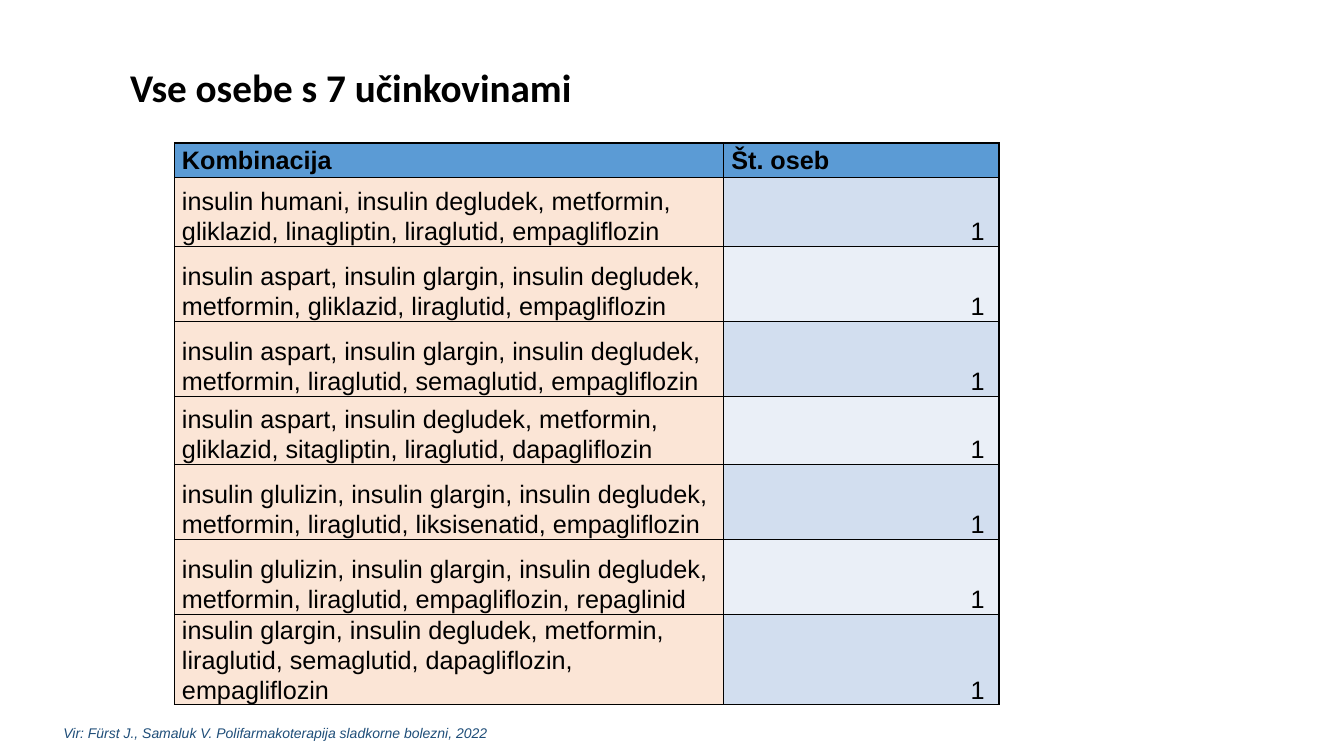
"""Build a slide with a table of seven-drug combinations."""
from dataclasses import dataclass

from lxml import etree
from pptx import Presentation
from pptx.dml.color import RGBColor
from pptx.enum.text import MSO_ANCHOR, MSO_AUTO_SIZE, PP_ALIGN
from pptx.oxml.ns import qn
from pptx.util import Pt

LEFT, RIGHT = PP_ALIGN.LEFT, PP_ALIGN.RIGHT
MIDDLE, BOTTOM = MSO_ANCHOR.MIDDLE, MSO_ANCHOR.BOTTOM
NONE = MSO_AUTO_SIZE.NONE
BLACK, BLUE, PEACH, NAVY = "000000", "5B9BD5", "FBE5D6", "1F4E79"
BANDS = ("D2DEEF", "EAEFF7")
WIDTHS = (392.4, 196.6)
HEAD = 24.4


@dataclass
class Combo:
    drugs: str
    height: float = 53.6
    count: int = 1


COMBOS = [
    Combo("insulin humani, insulin degludek, metformin, gliklazid, "
          "linagliptin, liraglutid, empagliflozin", 49.4),
    Combo("insulin aspart, insulin glargin, insulin degludek, metformin, "
          "gliklazid, liraglutid, empagliflozin"),
    Combo("insulin aspart, insulin glargin, insulin degludek, metformin, "
          "liraglutid, semaglutid, empagliflozin"),
    Combo("insulin aspart, insulin degludek, metformin, gliklazid, "
          "sitagliptin, liraglutid, dapagliflozin", 48.5),
    Combo("insulin glulizin, insulin glargin, insulin degludek, metformin, "
          "liraglutid, liksisenatid, empagliflozin"),
    Combo("insulin glulizin, insulin glargin, insulin degludek, metformin, "
          "liraglutid, empagliflozin, repaglinid"),
    Combo("insulin glargin, insulin degludek, metformin, liraglutid, "
          "semaglutid, dapagliflozin, empagliflozin"),
]


def rgb(code: str) -> RGBColor:
    return RGBColor.from_string(code)


def write(frame, text: str, *, size: float = 18, font: str = "Arial",
          color: str = BLACK, bold: bool = False, slant: bool = False,
          align=LEFT, line: float = 1.0, after: float = 0) -> None:
    para = frame.paragraphs[0]
    para.alignment = align
    para.line_spacing = line
    para.space_before, para.space_after = Pt(0), Pt(after)
    run = para.add_run()
    run.text = text
    face = run.font
    face.name, face.size = font, Pt(size)
    face.bold, face.italic = bold, slant
    face.color.rgb = rgb(color)


def border(cell) -> None:
    props = cell._tc.get_or_add_tcPr()
    for side in ("a:lnL", "a:lnR", "a:lnT", "a:lnB"):
        edge = etree.SubElement(props, qn(side), w=str(Pt(1)))
        solid = etree.SubElement(edge, qn("a:solidFill"))
        etree.SubElement(solid, qn("a:srgbClr"), val=BLACK)


def paint(cell, text: str, fill: str, *, anchor=BOTTOM, inset: float = 5.4,
          bold: bool = False, align=LEFT) -> None:
    border(cell)
    cell.fill.solid()
    cell.fill.fore_color.rgb = rgb(fill)
    cell.vertical_anchor = anchor
    cell.margin_left, cell.margin_right = Pt(5.4), Pt(inset)
    cell.margin_top = cell.margin_bottom = Pt(0)
    write(cell.text_frame, text, bold=bold, align=align, line=1.07, after=8)


def add_grid(slide) -> None:
    total = HEAD + sum(combo.height for combo in COMBOS)
    table = slide.shapes.add_table(
        len(COMBOS) + 1, len(WIDTHS), Pt(124.6), Pt(102.2),
        Pt(sum(WIDTHS)), Pt(total)).table
    for col, width in zip(table.columns, WIDTHS):
        col.width = Pt(width)
    table.rows[0].height = Pt(HEAD)
    for col, label in enumerate(("Kombinacija", "Št. oseb")):
        paint(table.cell(0, col), label, BLUE, anchor=MIDDLE, bold=True)
    for row, combo in enumerate(COMBOS, 1):
        table.rows[row].height = Pt(combo.height)
        paint(table.cell(row, 0), combo.drugs, PEACH)
        paint(table.cell(row, 1), str(combo.count), BANDS[(row - 1) % 2],
              inset=10.4, align=RIGHT)


def add_title(slide) -> None:
    title = slide.shapes.title
    title.left, title.top = Pt(85.7), Pt(30.2)
    title.width, title.height = Pt(791.3), Pt(67.7)
    frame = title.text_frame
    frame.auto_size, frame.vertical_anchor = NONE, MIDDLE
    write(frame, "Vse osebe s 7 učinkovinami", size=28, font="Calibri",
          bold=True, line=0.9)


def add_credit(slide) -> None:
    box = slide.shapes.add_textbox(Pt(38.2), Pt(514), Pt(565.2), Pt(19.4))
    box.text_frame.word_wrap = True
    write(box.text_frame, "Vir: Fürst J., Samaluk V. Polifarmakoterapija "
          "sladkorne bolezni, 2022", size=10, color=NAVY, slant=True)


def main() -> None:
    deck = Presentation()
    deck.slide_width, deck.slide_height = Pt(960), Pt(540)
    slide = deck.slides.add_slide(deck.slide_layouts[5])
    add_title(slide)
    add_grid(slide)
    add_credit(slide)
    deck.save("out.pptx")


if __name__ == "__main__":
    main()
